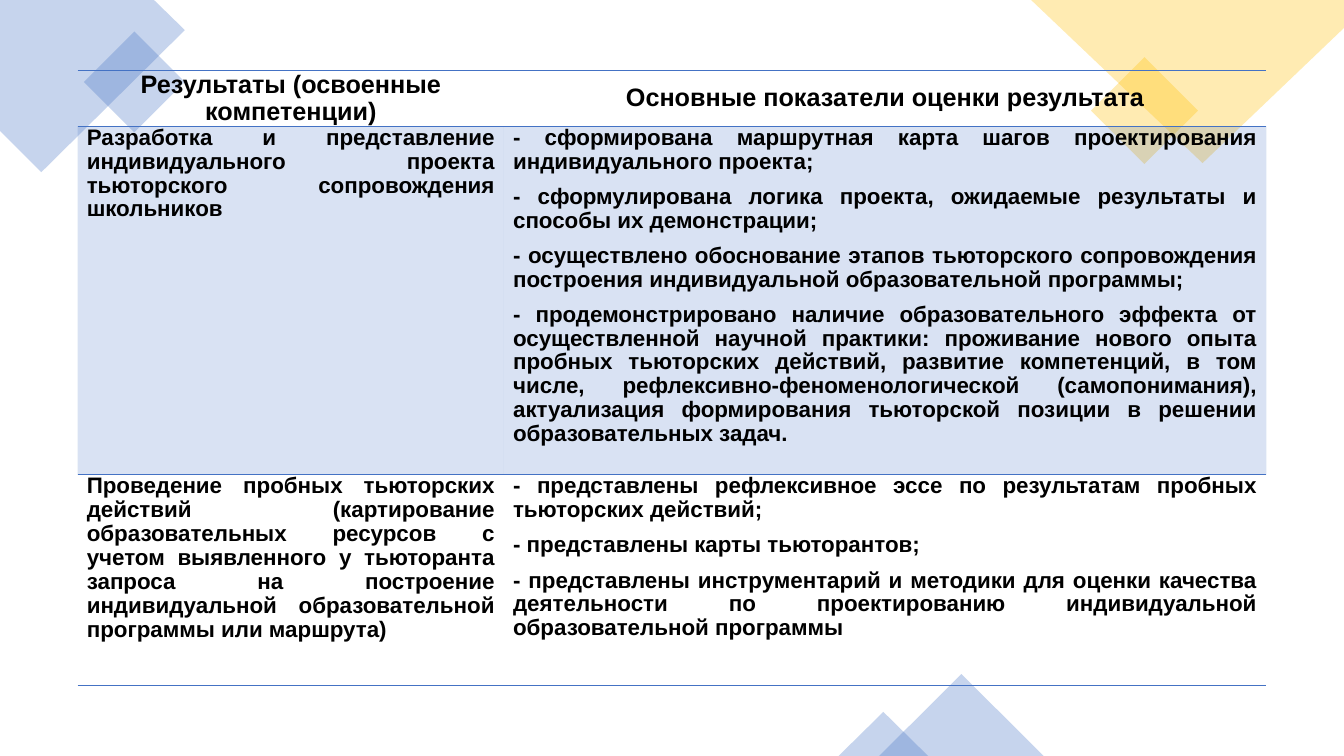
"""Builds the slide with the table of competencies and their assessment indicators."""
from dataclasses import dataclass
from typing import Any

import pptx
import pptx.dml.color
import pptx.enum.shapes
import pptx.enum.text
import pptx.oxml
import pptx.oxml.ns
import pptx.util
from lxml import etree

Pt = pptx.util.Pt
SHAPE = pptx.enum.shapes.MSO_SHAPE
ALIGN = pptx.enum.text.PP_ALIGN
ANCHOR = pptx.enum.text.MSO_ANCHOR
qn = pptx.oxml.ns.qn


@dataclass(frozen=True)
class Theme:
    blue: str = "4472C4"
    yellow: str = "FFC000"
    ink: str = "000000"
    font: str = "Arial"
    header_size: int = 18
    body_size: int = 16
    decor_alpha: int = 30
    band_alpha: int = 20
    rule_width: float = 1


def apply(target, values):
    for attribute, value in values.items():
        setattr(target, attribute, value)


@dataclass
class SlideBuilder:
    theme: Theme
    slide: Any

    def tint(self, fill, color, percent):
        fill.solid()
        fill.fore_color.rgb = pptx.dml.color.RGBColor.from_string(color)
        for color_node in fill._xPr.iterfind(f"{qn('a:solidFill')}/{qn('a:srgbClr')}"):
            etree.SubElement(color_node, qn("a:alpha"), val=str(percent * 1000))

    def finish_decor(self, decor, color):
        decor.shadow.inherit = False
        decor.line.fill.background()
        self.tint(decor.fill, color, self.theme.decor_alpha)

    def preset(self, kind, color, box, rotation=0):
        decor = self.slide.shapes.add_shape(kind, *map(Pt, box))
        decor.rotation = rotation
        self.finish_decor(decor, color)

    def polygon(self, color, corners):
        start, *rest = [(Pt(x), Pt(y)) for x, y in corners]
        outline = self.slide.shapes.build_freeform(*start)
        outline.add_line_segments(rest, close=True)
        self.finish_decor(outline.convert_to_shape(), color)

    def borders(self, cell):
        properties = cell._tc.get_or_add_tcPr()
        for side in ("lnL", "lnR", "lnT", "lnB"):
            edge = etree.SubElement(properties, qn(f"a:{side}"), w=str(Pt(self.theme.rule_width)))
            if side in ("lnT", "lnB"):
                paint = etree.SubElement(edge, qn("a:solidFill"))
                etree.SubElement(paint, qn("a:srgbClr"), val=self.theme.blue)
            else:
                etree.SubElement(edge, qn("a:noFill"))

    def cell_text(self, cell, paragraphs, size, alignment):
        frame = cell.text_frame
        frame.text = "\n".join(paragraphs)
        for paragraph in frame.paragraphs:
            apply(paragraph, {"alignment": alignment, "space_before": Pt(0),
                              "space_after": Pt(8), "line_spacing": 0.96})
            for run in paragraph.runs:
                apply(run.font, {"name": self.theme.font, "size": Pt(size), "bold": True})
                run.font.color.rgb = pptx.dml.color.RGBColor.from_string(self.theme.ink)

    def table(self, left, top, widths, heights, content):
        grid = self.slide.shapes.add_table(
            len(heights), len(widths), Pt(left), Pt(top), Pt(sum(widths)), Pt(sum(heights))).table
        apply(grid, {"first_row": False, "horz_banding": False})
        for column, width in zip(grid.columns, widths):
            column.width = Pt(width)
        for index, (row, height, texts) in enumerate(zip(grid.rows, heights, content)):
            row.height = Pt(height)
            header = index == 0
            for cell, paragraphs in zip(row.cells, texts):
                apply(cell, {"margin_left": Pt(6.5), "margin_right": Pt(6.5),
                             "margin_top": 0, "margin_bottom": 0,
                             "vertical_anchor": ANCHOR.MIDDLE if header else ANCHOR.TOP})
                self.borders(cell)
                if index % 2:
                    self.tint(cell.fill, self.theme.blue, self.theme.band_alpha)
                else:
                    cell.fill.background()
                self.cell_text(cell, paragraphs,
                               self.theme.header_size if header else self.theme.body_size,
                               ALIGN.CENTER if header else ALIGN.JUSTIFY)


COMPETENCIES = [
    [["Результаты (освоенные компетенции)"],
     ["Основные показатели оценки результата"]],
    [["Разработка и представление индивидуального проекта тьюторского сопровождения школьников"],
     ["- сформирована маршрутная карта шагов проектирования индивидуального проекта;",
      "- сформулирована логика проекта, ожидаемые результаты и способы их демонстрации;",
      "- осуществлено обоснование этапов тьюторского сопровождения построения "
      "индивидуальной образовательной программы;",
      "- продемонстрировано наличие образовательного эффекта от осуществленной научной практики: "
      "проживание нового опыта пробных тьюторских действий, развитие компетенций, в том числе, "
      "рефлексивно-феноменологической (самопонимания), актуализация формирования "
      "тьюторской позиции в решении образовательных задач."]],
    [["Проведение пробных тьюторских действий (картирование образовательных ресурсов "
      "с учетом выявленного у тьюторанта запроса на построение индивидуальной "
      "образовательной программы или маршрута)"],
     ["- представлены рефлексивное эссе по результатам пробных тьюторских действий;",
      "- представлены карты тьюторантов;",
      "- представлены инструментарий и методики для оценки качества деятельности "
      "по проектированию индивидуальной образовательной программы"]],
]


def main():
    presentation = pptx.Presentation()
    apply(presentation, {"slide_width": Pt(960), "slide_height": Pt(540)})
    theme = Theme()
    builder = SlideBuilder(theme, presentation.slides.add_slide(presentation.slide_layouts[6]))

    builder.polygon(theme.blue, [(110, 0), (0, 0), (0, 93.5), (29.5, 123), (132, 21.5)])
    builder.preset(SHAPE.RECTANGLE, theme.blue, (70.5, 33, 51, 51), 315)
    builder.preset(SHAPE.RECTANGLE, theme.yellow, (790.5, 52, 54, 54), 315)
    builder.polygon(theme.yellow, [(960, 0), (736.5, 0), (859, 116.5), (960, 20)])
    for box in ((628, 481.5, 117.5, 58.5), (599, 508.5, 64, 31.5)):
        builder.preset(SHAPE.ISOSCELES_TRIANGLE, theme.blue, box)

    builder.table(55.5, 50.5, (304.5, 544.5), (39.6, 249.1, 150.5), COMPETENCIES)
    presentation.save("out.pptx")


if __name__ == "__main__":
    main()
